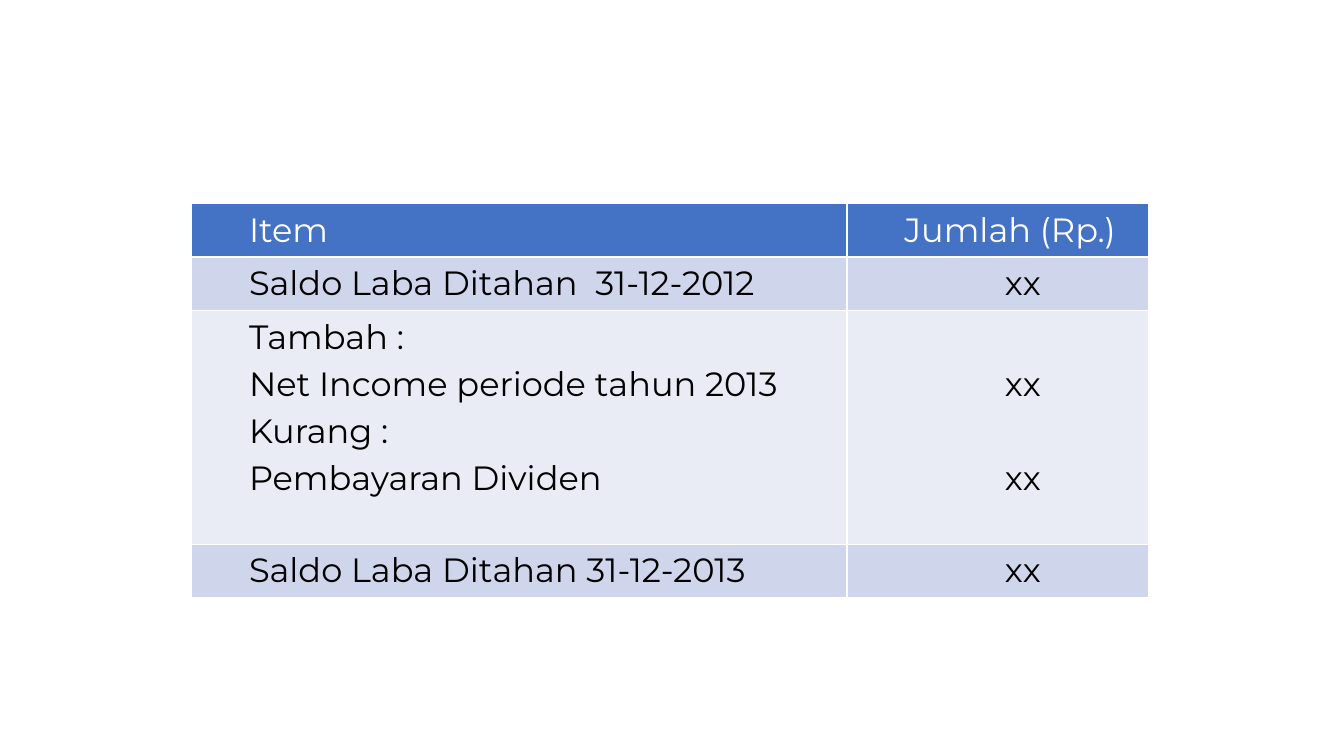
import pptx
import pptx.dml.color
import pptx.enum.text
import pptx.oxml
import pptx.oxml.ns
import pptx.util
from pptx.util import Inches

COLORS = {"header": "4472C4", "band": "CFD5EA", "plain": "E9EBF5",
          "border": "FFFFFF", "header_text": "FFFFFF", "body_text": "000000"}
FONT = "Montserrat"
LINE_PITCH = 33.6

ROWS = [
    {"height": 0.53, "fill": "header", "items": ["Item"], "amounts": ["Jumlah (Rp.)"]},
    {"height": 0.53, "fill": "band", "items": ["Saldo Laba Ditahan  31-12-2012"], "amounts": ["xx"]},
    {"height": 2.32, "fill": "plain",
     "items": ["Tambah :", "Net Income periode tahun 2013", "Kurang :", "Pembayaran Dividen"],
     "amounts": ["", "xx", "", "xx"]},
    {"height": 0.53, "fill": "band", "items": ["Saldo Laba Ditahan 31-12-2013"], "amounts": ["xx"]},
]
COLUMN_WIDTHS = [6.5, 2.99]
LEFT, TOP = 1.9, 2.02


def rgb(name):
    return pptx.dml.color.RGBColor.from_string(COLORS[name])


def write_lines(cell, lines, color, centered=False):
    frame = cell.text_frame
    started = False
    skipped = 0
    for line in lines:
        if not line:
            skipped += 1
            continue
        gap = pptx.util.Pt(skipped * LINE_PITCH)
        paragraph = frame.add_paragraph() if started else frame.paragraphs[0]
        if started:
            paragraph.space_before = gap
        else:
            cell.margin_top = gap
        started, skipped = True, 0
        paragraph.line_spacing = 1.15
        paragraph.alignment = (pptx.enum.text.PP_ALIGN.CENTER if centered
                               else pptx.enum.text.PP_ALIGN.LEFT)
        properties = paragraph._p.get_or_add_pPr()
        properties.set("marL", str(Inches(0.5)))
        properties.set("indent", "0")
        run = paragraph.add_run()
        run.text = line
        run.font.name = FONT
        run.font.size = pptx.util.Pt(24)
        run.font.bold = False
        run.font.color.rgb = rgb(color)


def add_borders(cell):
    properties = cell._tc.get_or_add_tcPr()
    for position, side in enumerate(("lnL", "lnR", "lnT", "lnB")):
        border = pptx.oxml.parse_xml(
            f'<a:{side} {pptx.oxml.ns.nsdecls("a")} w="12700"><a:solidFill>'
            f'<a:srgbClr val="{COLORS["border"]}"/></a:solidFill></a:{side}>')
        properties.insert(position, border)


def main():
    deck = pptx.Presentation()
    deck.slide_width, deck.slide_height = Inches(13.33), Inches(7.5)
    slide = deck.slides.add_slide(deck.slide_layouts[6])
    total_height = sum(row["height"] for row in ROWS)
    statement = slide.shapes.add_table(
        len(ROWS), len(COLUMN_WIDTHS), Inches(LEFT), Inches(TOP),
        Inches(sum(COLUMN_WIDTHS)), Inches(total_height)).table
    for column, width in zip(statement.columns, COLUMN_WIDTHS):
        column.width = Inches(width)
    for row_index, row in enumerate(ROWS):
        statement.rows[row_index].height = Inches(row["height"])
        is_header = row["fill"] == "header"
        for column_index, part in enumerate(("items", "amounts")):
            cell = statement.cell(row_index, column_index)
            cell.margin_left = cell.margin_right = Inches(0.07)
            cell.margin_top = cell.margin_bottom = 0
            cell.fill.solid()
            cell.fill.fore_color.rgb = rgb(row["fill"])
            add_borders(cell)
            write_lines(cell, row[part], color="header_text" if is_header else "body_text",
                        centered=part == "amounts" and not is_header)
    deck.save("out.pptx")


if __name__ == "__main__":
    main()
